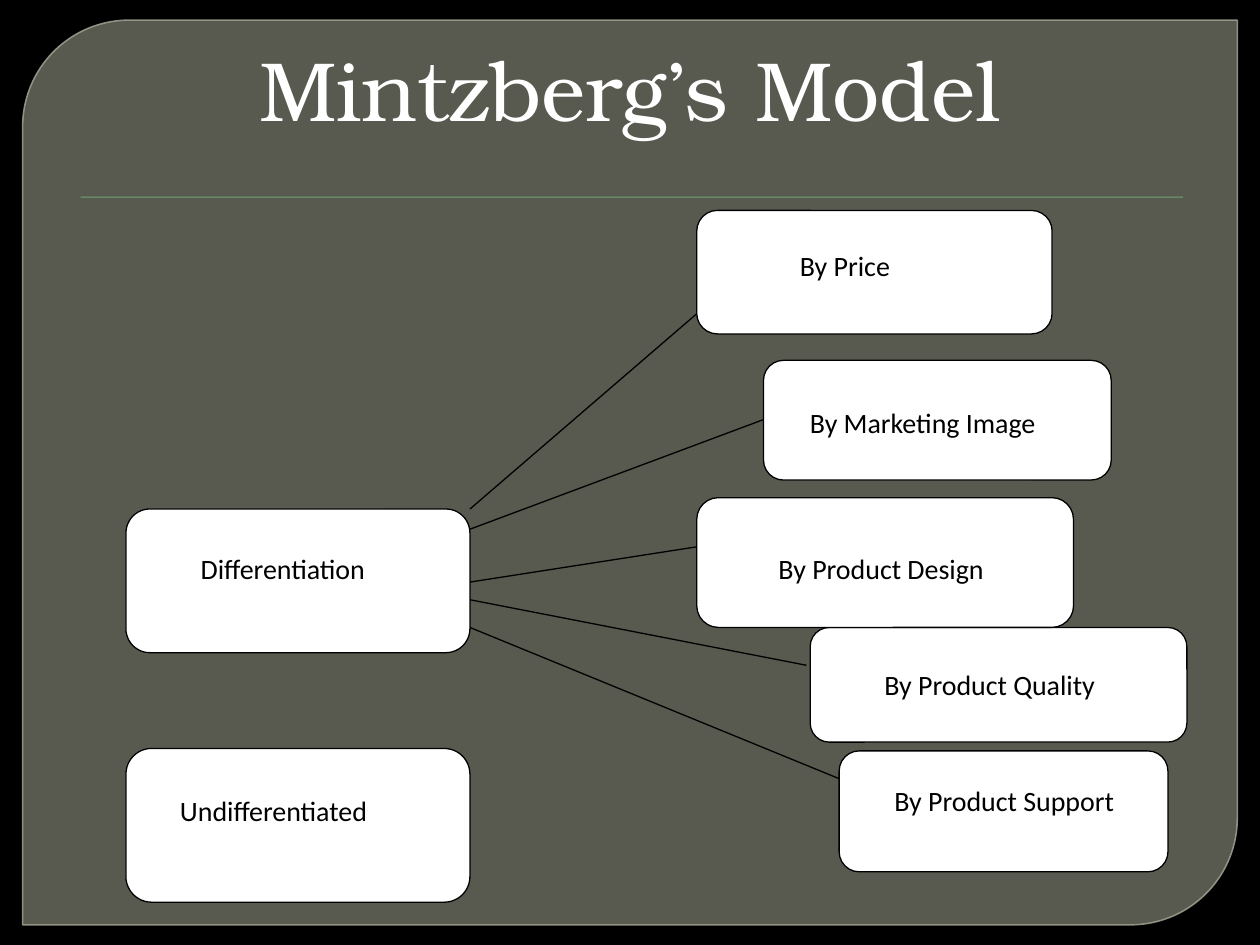
from lxml.etree import SubElement
from pptx import Presentation
from pptx.dml.color import RGBColor
from pptx.enum.shapes import MSO_CONNECTOR, MSO_SHAPE
from pptx.enum.text import MSO_ANCHOR, MSO_AUTO_SIZE, PP_ALIGN
from pptx.oxml.ns import qn
from pptx.util import Inches, Pt

BLACK = RGBColor(0x00, 0x00, 0x00)
WHITE = RGBColor(0xFF, 0xFF, 0xFF)
PANEL = RGBColor(0x88, 0x8B, 0x7B)
PANEL_EDGE = RGBColor(0x9D, 0xA0, 0x90)
GREEN = RGBColor(0x72, 0xA3, 0x76)

presentation = Presentation()
presentation.slide_width = Inches(10)
presentation.slide_height = Inches(7.5)
slide = presentation.slides.add_slide(presentation.slide_layouts[5])
slide.background.fill.solid()
slide.background.fill.fore_color.rgb = BLACK


def add_box(kind, position, fill, line=None, width=0.75):
    shape = slide.shapes.add_shape(kind, *[Inches(value) for value in position])
    shape.shadow.inherit = False
    shape.fill.solid()
    shape.fill.fore_color.rgb = fill
    if line is None:
        shape.line.fill.background()
    else:
        shape.line.color.rgb = line
        shape.line.width = Pt(width)
    return shape


def write_text(shape, text, size=16, font="Calibri", color=BLACK,
               align=PP_ALIGN.LEFT, space_after=10):
    frame = shape.text_frame
    frame.word_wrap = True
    frame.auto_size = MSO_AUTO_SIZE.NONE
    frame.vertical_anchor = MSO_ANCHOR.TOP
    paragraph = frame.paragraphs[0]
    paragraph.alignment = align
    paragraph.space_after = Pt(space_after)
    run = paragraph.add_run()
    run.text = text
    run.font.size = Pt(size)
    run.font.name = font
    run.font.color.rgb = color


# Background panel with two rounded corners, and the rule below the title
panel = add_box(MSO_SHAPE.ROUND_2_DIAG_RECTANGLE, (0.18, 0.16, 9.64, 7.18),
                PANEL, PANEL_EDGE, 0.87)
panel.adjustments[0] = 0.118
panel.adjustments[1] = 0
for color, opacity in ((panel.fill.fore_color, 65), (panel.line.color, 88)):
    owner = panel.element.spPr if color.rgb == PANEL else panel.element.spPr.find(qn("a:ln"))
    fill_color = owner.find(qn("a:solidFill")).find(qn("a:srgbClr"))
    SubElement(fill_color, qn("a:alpha"), val=str(opacity * 1000))
rule = add_box(MSO_SHAPE.RECTANGLE, (0.64, 1.56, 8.75, 0.01), GREEN)

# Title, in front of the panel
title = slide.shapes.title
title.left, title.top = Inches(0), Inches(0.25)
title.width, title.height = Inches(10), Inches(0.95)
write_text(title, "Mintzberg’s Model", size=48, font="TeX Gyre Bonum",
           color=WHITE, align=PP_ALIGN.CENTER, space_after=0)
rule.element.addnext(title.element)

# Lines from Differentiation to its five forms: start height, end point
SOURCE_RIGHT = 3.73
for start_y, end_x, end_y in (
    (4.04, 5.53, 2.49),
    (4.20, 6.06, 3.33),
    (4.62, 5.53, 4.34),
    (4.76, 6.40, 5.28),
    (4.98, 6.66, 6.18),
):
    connector = slide.shapes.add_connector(
        MSO_CONNECTOR.STRAIGHT, Inches(SOURCE_RIGHT), Inches(start_y),
        Inches(end_x), Inches(end_y))
    connector.line.color.rgb = BLACK
    connector.line.width = Pt(0.75)
    SubElement(connector.element.spPr, qn("a:effectLst"))

# Rounded boxes, each with a label: text, box, label area, label edge, alignment
STRATEGIES = (
    ("Undifferentiated", (1, 5.94, 2.73, 1.22), (1.33, 6.25, 1.92, 0.64), WHITE, PP_ALIGN.LEFT),
    ("By Product Support", (6.66, 5.96, 2.61, 0.96), (7, 6.17, 2.1, 0.5), None, PP_ALIGN.LEFT),
    ("By Product Quality", (6.43, 4.98, 2.99, 0.91), (6.92, 5.25, 1.92, 0.5), WHITE, PP_ALIGN.LEFT),
    ("By Product Design", (5.53, 3.95, 2.99, 1.03), (6.08, 4.33, 2.19, 0.37), WHITE, PP_ALIGN.LEFT),
    ("By Marketing Image", (6.06, 2.86, 2.76, 0.95), (6.33, 3.17, 2.36, 0.37), WHITE, PP_ALIGN.LEFT),
    ("Differentiation", (1, 4.04, 2.73, 1.14), (1.08, 4.33, 2.33, 0.5), WHITE, PP_ALIGN.CENTER),
    ("By Price", (5.53, 1.67, 2.82, 0.98), (6.25, 1.92, 1.5, 0.51), WHITE, PP_ALIGN.LEFT),
)
for text, box, label_area, edge, align in STRATEGIES:
    add_box(MSO_SHAPE.ROUNDED_RECTANGLE, box, WHITE, BLACK)
    label = add_box(MSO_SHAPE.RECTANGLE, label_area, WHITE, edge)
    write_text(label, text, align=align)

presentation.save("out.pptx")
